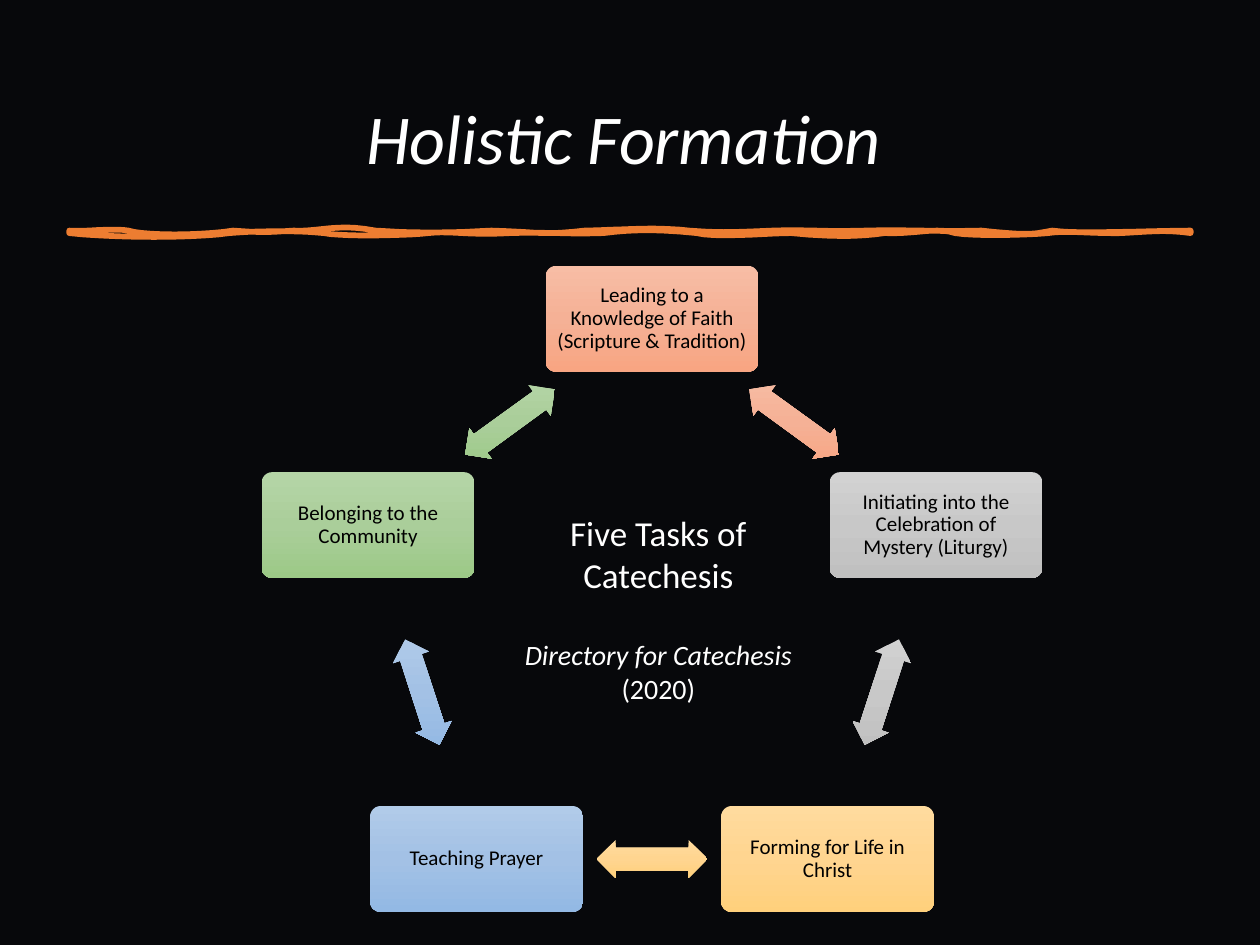
from copy import deepcopy
from math import cos, radians, sin

from pptx import Presentation
from pptx.dml.color import RGBColor
from pptx.enum import shapes, text
from pptx.util import Inches, Pt

# Content: tasks clockwise from the top, each with the name of its palette
TASKS = [
    ("Leading to a Knowledge of Faith (Scripture & Tradition)", "coral"),
    ("Initiating into the Celebration of Mystery (Liturgy)", "grey"),
    ("Forming for Life in Christ", "gold"),
    ("Teaching Prayer", "blue"),
    ("Belonging to the Community", "green"),
]
# Paragraphs are lists of (wording, size in points, italic)
TITLE = [[("Holistic Formation", 40, True)]]
CENTRE_TEXT = [
    [("Five Tasks of Catechesis", 20, False)],
    [("Directory for Catechesis ", 16, True), ("(2020)", 16, False)],
]

# Colours; a palette runs from top to bottom of a shape
FONT = "Calibri"
BLACK = RGBColor(0x00, 0x00, 0x00)
WHITE = RGBColor(0xFF, 0xFF, 0xFF)
NIGHT = RGBColor(0x07, 0x08, 0x0B)
ORANGE = RGBColor(0xED, 0x7D, 0x31)
PALETTES = {
    "coral": (RGBColor(0xF7, 0xBD, 0xA5), RGBColor(0xF5, 0xB1, 0x96), RGBColor(0xF8, 0xA5, 0x82)),
    "grey": (RGBColor(0xD2, 0xD2, 0xD2), RGBColor(0xC8, 0xC8, 0xC8), RGBColor(0xC0, 0xC0, 0xC0)),
    "gold": (RGBColor(0xFF, 0xDB, 0x9E), RGBColor(0xFF, 0xD5, 0x90), RGBColor(0xFF, 0xD0, 0x7C)),
    "blue": (RGBColor(0xB1, 0xCB, 0xE9), RGBColor(0xA3, 0xC1, 0xE5), RGBColor(0x93, 0xB9, 0xE4)),
    "green": (RGBColor(0xB5, 0xD5, 0xA7), RGBColor(0xAA, 0xCE, 0x9A), RGBColor(0x9C, 0xC9, 0x87)),
}

# Layout: text boxes as shares of the slide, the rest in inches
WIDTH, HEIGHT = 10, 7.5
TITLE_AREA = (0.03, 0.05, 0.93, 0.2)
CENTRE_AREA = (0.385, 0.535, 0.275, 0.22)
RING_CENTRE, RING_RADIUS = (5.175, 4.9), 2.37
STEP = 360 / len(TASKS)
CARD_SIZE, CARD_ROUNDING, CARD_MARGIN = (1.69, 0.84), 0.1, 0.05
ARROW_SIZE, ARROW_SHAFT, ARROW_HEAD = (0.88, 0.3), 0.6, 0.5

# Brush stroke: a thin ribbon whose two edges wave about a level.
# Each wave is (control x, control y, control x, control y, end x).
RULE_LEFT, UPPER_LEVEL, LOWER_LEVEL = 0.55, 1.83, 1.85
UPPER_WAVES = [  # left to right
    (0.64, 1.84, 0.89, 1.81, 1.02), (1.14, 1.87, 1.6, 1.87, 1.85),
    (2.13, 1.85, 2.16, 1.84, 2.33), (2.54, 1.84, 2.68, 1.77, 2.98),
    (3.31, 1.85, 3.52, 1.85, 3.9), (4.31, 1.84, 4.28, 1.87, 4.64),
    (5.03, 1.82, 5.2, 1.8, 5.47), (5.73, 1.85, 5.88, 1.84, 6.13),
    (6.41, 1.82, 6.51, 1.84, 6.87), (7.21, 1.82, 7.41, 1.84, 7.79),
    (8.17, 1.87, 8.19, 1.86, 8.35), (8.55, 1.86, 9.13, 1.83, 9.45),
]
LOWER_WAVES = [  # right to left
    (9.2, 1.81, 8.95, 1.86, 8.8), (8.63, 1.85, 8.45, 1.83, 8.32),
    (8.22, 1.86, 7.77, 1.88, 7.58), (7.43, 1.8, 7.27, 1.86, 7.02),
    (6.76, 1.89, 6.5, 1.87, 6.28), (6.07, 1.85, 5.7, 1.89, 5.53),
    (5.32, 1.83, 5.08, 1.81, 4.79), (4.5, 1.86, 4.35, 1.84, 4.05),
    (3.74, 1.87, 3.56, 1.83, 3.4), (3.23, 1.87, 2.71, 1.88, 2.57),
    (2.38, 1.83, 2.06, 1.83, 1.82), (1.56, 1.89, 0.91, 1.89, 0.55),
]
SAMPLES = 10
UNITS = 1000  # freeform points are whole numbers, so count in 1/1000 inch


def write(frame, paragraphs, color, spacing=1.0, gap=0):
    frame.word_wrap = True
    for number, spans in enumerate(paragraphs):
        para = frame.add_paragraph() if number else frame.paragraphs[0]
        layout = {"alignment": text.PP_ALIGN.CENTER, "line_spacing": spacing,
                  "space_before": Pt(gap if number else 0)}
        for name, value in layout.items():
            setattr(para, name, value)
        for wording, size, italic in spans:
            span = para.add_run()
            span.text = wording
            style = {"name": FONT, "size": Pt(size), "italic": italic}
            for name, value in style.items():
                setattr(span.font, name, value)
            span.font.color.rgb = color


def add_text(page, area, paragraphs, anchor, **options):
    lengths = (share * side for share, side in zip(area, (WIDTH, HEIGHT) * 2))
    box = page.shapes.add_textbox(*map(Inches, lengths))
    box.text_frame.vertical_anchor = anchor
    write(box.text_frame, paragraphs, WHITE, **options)


def bezier(*points):
    """Sample a cubic curve, leaving out its first point."""
    for number in range(1, SAMPLES + 1):
        t = number / SAMPLES
        weights = ((1 - t) ** 3, 3 * (1 - t) ** 2 * t, 3 * (1 - t) * t ** 2, t ** 3)
        yield tuple(sum(w * value for w, value in zip(weights, axis)) for axis in zip(*points))


def edge(start_x, level, waves):
    points = [(start_x, level)]
    for x1, y1, x2, y2, end_x in waves:
        points += bezier(points[-1], (x1, y1), (x2, y2), (end_x, level))
    return points


def add_brush_rule(page):
    upper = edge(RULE_LEFT, UPPER_LEVEL, UPPER_WAVES)
    lower = edge(upper[-1][0], LOWER_LEVEL, LOWER_WAVES)
    start, *rest = [(x * UNITS, y * UNITS) for x, y in upper + lower]
    builder = page.shapes.build_freeform(*start, scale=Inches(1) / UNITS)
    builder.add_line_segments(rest, close=True)
    rule = builder.convert_to_shape()
    rule.shadow.inherit = False
    rule.fill.background()
    rule.line.color.rgb = ORANGE
    rule.line.width = Pt(3.25)


def fill_downwards(shape, palette):
    shape.fill.gradient()
    shape.fill.gradient_angle = 270
    gradient = shape.fill._fill._gradFill
    gradient.set("rotWithShape", "0")  # a turned shape still shades down the page
    gradient.gsLst.insert(1, deepcopy(gradient.gsLst[0]))
    for stop, color, position in zip(shape.fill.gradient_stops, palette, (0, 0.5, 1)):
        stop.color.rgb = color
        stop.position = position


def add_shaded(page, kind, middle, size, palette, *adjustments):
    corner = [centre - length / 2 for centre, length in zip(middle, size)]
    shape = page.shapes.add_shape(kind, *map(Inches, (*corner, *size)))
    shape.shadow.inherit = False
    shape.line.fill.background()
    fill_downwards(shape, palette)
    for number, value in enumerate(adjustments):
        shape.adjustments[number] = value
    return shape


def ring_point(position):
    angle = radians(position * STEP)
    x, y = RING_CENTRE
    return x + RING_RADIUS * sin(angle), y - RING_RADIUS * cos(angle)


def add_card(page, position, wording, palette):
    card = add_shaded(page, shapes.MSO_SHAPE.ROUNDED_RECTANGLE, ring_point(position),
                      CARD_SIZE, palette, CARD_ROUNDING)
    frame = card.text_frame
    frame.vertical_anchor = text.MSO_ANCHOR.MIDDLE
    for side in ("left", "right", "top", "bottom"):
        setattr(frame, f"margin_{side}", Inches(CARD_MARGIN))
    write(frame, [[(wording, 12, False)]], BLACK, spacing=0.9)


def add_arrow(page, position, palette):
    """Place an arrow halfway to the next card, turned along that side of the ring."""
    ends = ring_point(position), ring_point(position + 1)
    halfway = [sum(axis) / 2 for axis in zip(*ends)]
    arrow = add_shaded(page, shapes.MSO_SHAPE.LEFT_RIGHT_ARROW, halfway,
                       ARROW_SIZE, palette, ARROW_SHAFT, ARROW_HEAD)
    arrow.rotation = (position + 0.5) * STEP


def main():
    deck = Presentation()
    deck.slide_width, deck.slide_height = Inches(WIDTH), Inches(HEIGHT)
    page = deck.slides.add_slide(deck.slide_layouts[6])
    page.background.fill.solid()
    page.background.fill.fore_color.rgb = NIGHT

    # Heading
    add_text(page, TITLE_AREA, TITLE, text.MSO_ANCHOR.MIDDLE, spacing=0.9)
    add_brush_rule(page)

    # Ring of tasks around the centre text
    for position, (wording, palette_name) in enumerate(TASKS):
        palette = PALETTES[palette_name]
        add_card(page, position, wording, palette)
        add_arrow(page, position, palette)
    add_text(page, CENTRE_AREA, CENTRE_TEXT, text.MSO_ANCHOR.TOP, gap=24)

    deck.save("out.pptx")


if __name__ == "__main__":
    main()
